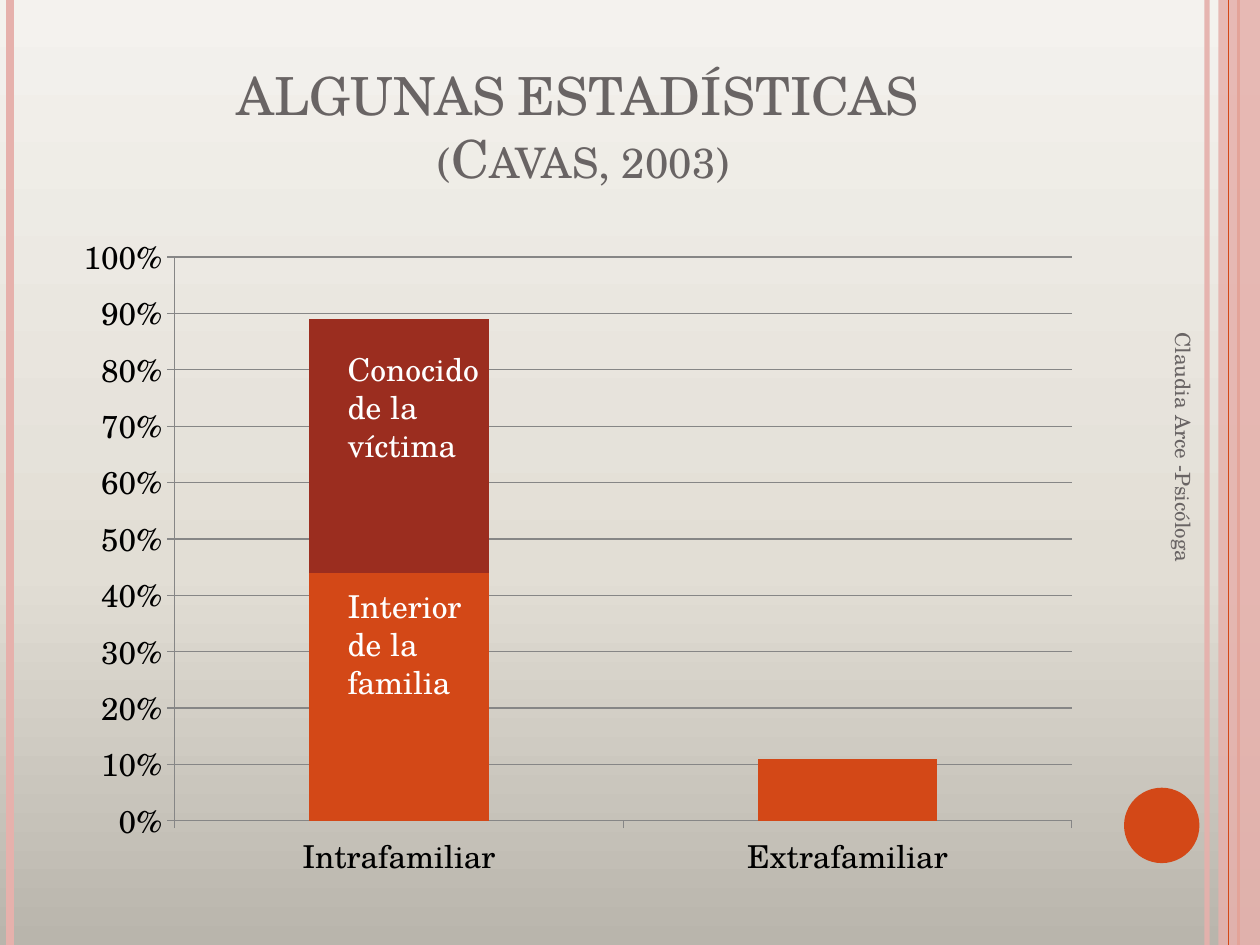
"""Build a slide with a stacked column chart of family statistics."""
from copy import deepcopy

from pptx import Presentation
from pptx.chart.data import CategoryChartData
from pptx.dml.color import RGBColor
from pptx.enum.chart import XL_CHART_TYPE as Kind, XL_TICK_MARK as Tick
from pptx.enum.shapes import MSO_CONNECTOR as Link, MSO_SHAPE as Form
from pptx.enum.text import MSO_ANCHOR as Anchor, PP_ALIGN as Align
from pptx.oxml.ns import qn
from pptx.oxml.xmlchemy import OxmlElement as Node
from pptx.util import Cm, Pt

FONT = "TeX Gyre Schola"
PINK, ORANGE, RED, GREY = "E6B1AC", "D34817", "9B2D1F", "696464"


def tint(color, code, alpha=100):
    """Set a colour from a hex string, with an opacity in percent."""
    color.rgb = RGBColor.from_string(code)
    if alpha < 100:
        node = Node("a:alpha")
        node.set("val", str(alpha * 1000))
        color._xFill.find(qn("a:srgbClr")).append(node)


def style(font, size, code):
    """Set the face, size and colour of a font."""
    font.name, font.size = FONT, Pt(size)
    tint(font.color, code)


deck = Presentation()
deck.slide_width, deck.slide_height = Cm(25.4), Cm(19.05)
slide = deck.slides.add_slide(deck.slide_layouts[5])
shapes = slide.shapes

back = slide.background.fill
back.gradient()
back.gradient_angle = 90
stops = slide._element.find(".//" + qn("a:gsLst"))
stops.append(deepcopy(stops[0]))
for stop, (place, code) in zip(
        back.gradient_stops, [(0, "B9B5AC"), (0.4, "E2DED5"), (1, "F4F2EE")]):
    stop.position = place
    tint(stop.color, code)

for x, width, code, alpha in [(24.33, 3, PINK, 93), (0.2, 4.5, PINK, 100),
                              (24.97, 1.5, ORANGE, 100), (24.77, 0.75, ORANGE, 100)]:
    rule = shapes.add_connector(Link.STRAIGHT, Cm(x), 0, Cm(x), Cm(19.05))
    rule.line.width = Pt(width)
    rule.line.fill.solid()
    tint(rule.line.fill.fore_color, code, alpha)
    rule._element.spPr.append(Node("a:effectLst"))
    if x == 24.97:
        band = shapes.add_shape(Form.RECTANGLE, Cm(24.56), 0, Cm(0.84), Cm(19.05))
disc = shapes.add_shape(Form.OVAL, Cm(22.66), Cm(15.88), Cm(1.52), Cm(1.52))
for shape, code, alpha in [(band, PINK, 87), (disc, ORANGE, 100)]:
    shape.shadow.inherit = False
    shape.line.fill.background()
    shape.fill.solid()
    tint(shape.fill.fore_color, code, alpha)

title = shapes.title
title.left, title.top, title.width, title.height = Cm(1.27), Cm(0.76), Cm(20.75), Cm(3.18)
frame = title.text_frame
frame.text = "ALGUNAS ESTADÍSTICAS\v (Cavas, 2003)"
frame.vertical_anchor = Anchor.BOTTOM
frame.paragraphs[0].alignment = Align.CENTER
for run in frame.paragraphs[0].runs:
    style(run.font, 30, GREY)
    run.font._element.set("cap", "small")

data = CategoryChartData(number_format="0%")
data.categories = ["Intrafamiliar", "Extrafamiliar"]
data.add_series("Series 1", [0.44, 0.11])
data.add_series("Series 2", [0.45, None])
chart = shapes.add_chart(Kind.COLUMN_STACKED, Cm(1.27), Cm(4.45),
                         Cm(20.75), Cm(13.54), data).chart
chart.has_legend = chart.has_title = False
style(chart.font, 18, "000000")
plot = chart.plots[0]
plot.gap_width, plot.overlap = 150, 100
for bar, code in zip(plot.series, [ORANGE, RED]):
    bar.format.fill.solid()
    tint(bar.format.fill.fore_color, code)
axis = chart.value_axis
axis.minimum_scale, axis.maximum_scale, axis.major_unit = 0, 1, 0.1
axis.has_major_gridlines = True
axis.tick_labels.number_format = "0%"
axis.tick_labels.number_format_is_linked = False
for part in (axis, chart.category_axis):
    part.major_tick_mark = Tick.OUTSIDE
for part in (axis, chart.category_axis, axis.major_gridlines):
    part.format.line.width = Pt(0.75)
    tint(part.format.line.color, "868686")

for text, x, y, wide, high, size, code, turn in [
        ("Conocido de la víctima", 6.76, 6.93, 3.2, 2.57, 18, "FFFFFF", 0),
        ("Interior de la familia", 6.76, 11.71, 2.97, 2.57, 18, "FFFFFF", 0),
        ("Claudia Arce -Psicóloga", 19.41, 10.39, 8.89, 1.02, 12, GREY, 90)]:
    box = shapes.add_textbox(Cm(x), Cm(y), Cm(wide), Cm(high))
    box.rotation = turn
    frame = box.text_frame
    frame.word_wrap = True
    frame.vertical_anchor = Anchor.MIDDLE if turn else Anchor.TOP
    frame.text = text
    style(frame.paragraphs[0].runs[0].font, size, code)

deck.save("out.pptx")
